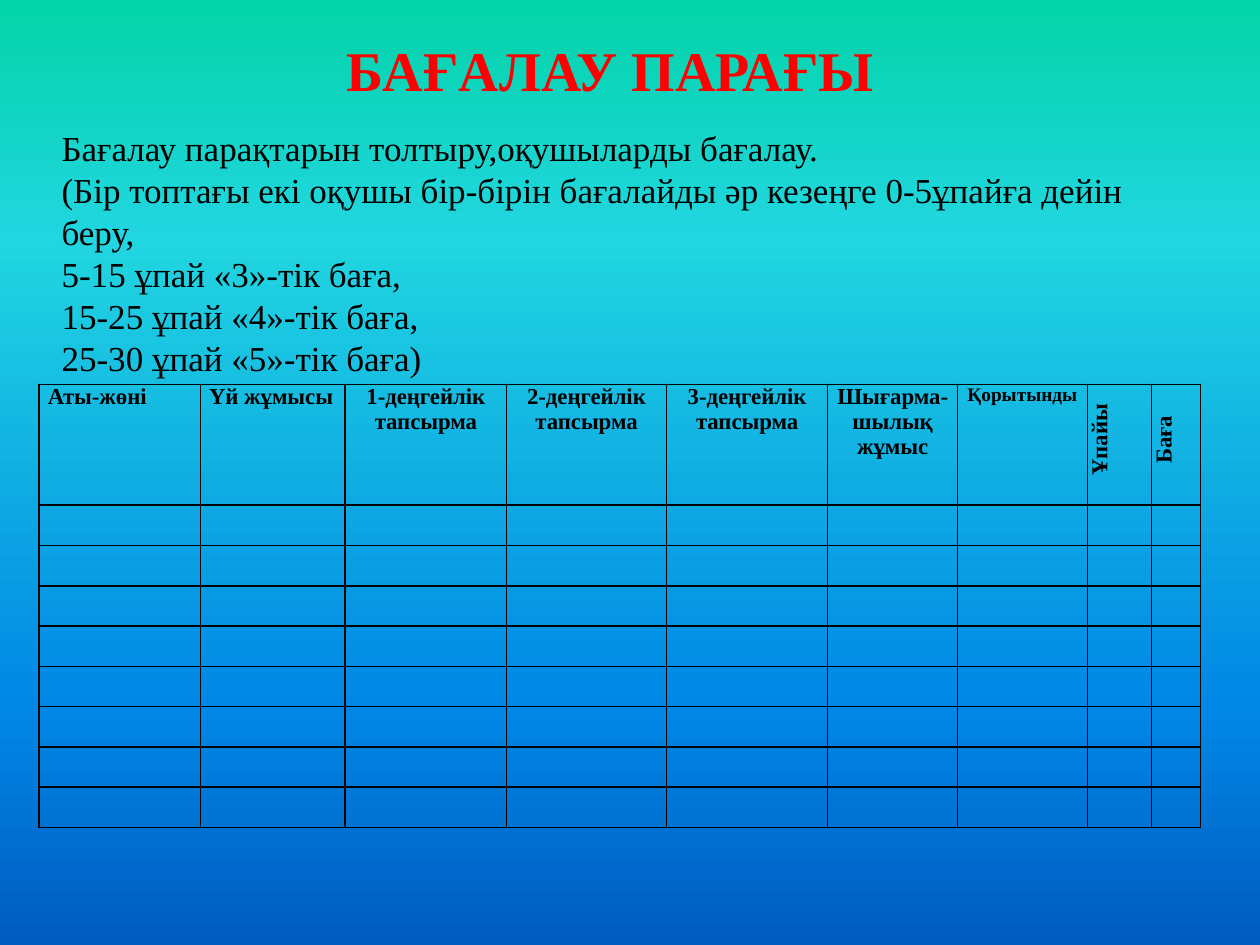
import pptx
import pptx.util
import pptx.dml.color
import pptx.enum.text
import pptx.oxml
import pptx.oxml.ns

ALIGN = pptx.enum.text.PP_ALIGN
ANCHOR = pptx.enum.text.MSO_ANCHOR
COLORS = {"title": "FF0000", "text": "000000", "border": "000000"}
BACKGROUND = {0: "03D4A8", 25: "21D6E0", 75: "0087E6", 100: "005CBF"}
FONT = "Times New Roman"
NS = pptx.oxml.ns.nsdecls("a")


def write(tf, text, size=20, color="text", bold=False, align=ALIGN.LEFT, indent=0):
    """Put each line of text in a paragraph of its own."""
    tf.word_wrap = True
    for i, line in enumerate(text.split("\n")):
        p = tf.paragraphs[0] if i == 0 else tf.add_paragraph()
        p.alignment = align
        p.space_before = pptx.util.Pt(0)
        if indent:
            pPr = p._p.get_or_add_pPr()
            pPr.set("marL", str(pptx.util.Inches(indent)))
            pPr.set("indent", "0")
        # An empty line keeps only its size
        font = p.font
        if line:
            r = p.add_run()
            r.text = line
            font = r.font
        font.name, font.bold = FONT, bold
        font.size = pptx.util.Pt(size)
        font.color.rgb = pptx.dml.color.RGBColor.from_string(COLORS[color])


class Deck:
    """Current slide, measured on a grid of 100 columns by 75 rows."""

    def __init__(self):
        self.prs = pptx.Presentation()
        self.prs.slide_width = pptx.util.Inches(10)
        self.prs.slide_height = pptx.util.Inches(7.5)
        self.unit = self.prs.slide_width / 100
        self.s = self.prs.slides.add_slide(self.prs.slide_layouts[5])

    def grid(self, *lengths):
        return [pptx.util.Emu(round(n * self.unit)) for n in lengths]

    def background(self, stops):
        fill = self.s.background.fill
        fill.gradient()
        fill.gradient_angle = 270
        gs_list = fill._fill._gradFill.find(pptx.oxml.ns.qn("a:gsLst"))
        gs_list.clear()
        for pos, color in stops.items():
            gs_list.append(pptx.oxml.parse_xml(
                f'<a:gs {NS} pos="{pos * 1000}"><a:srgbClr val="{color}"/></a:gs>'))

    def title(self, text, *at, **style):
        sp = self.s.shapes.title
        sp.left, sp.top, sp.width, sp.height = self.grid(*at)
        sp.text_frame.auto_size = pptx.enum.text.MSO_AUTO_SIZE.NONE
        sp.text_frame.vertical_anchor = ANCHOR.TOP
        write(sp.text_frame, text, align=ALIGN.CENTER, **style)

    def text(self, text, *at, **style):
        tf = self.s.shapes.add_textbox(*self.grid(*at)).text_frame
        tf.vertical_anchor = ANCHOR.MIDDLE
        write(tf, text, **style)

    def table(self, header, left, top, cols, rows):
        frame = self.s.shapes.add_table(
            len(rows), len(cols), *self.grid(left, top, sum(cols), sum(rows)))
        table = frame.table
        table.first_row = table.horz_banding = False
        for col, width in zip(table.columns, self.grid(*cols)):
            col.width = width
        for row, height in zip(table.rows, self.grid(*rows)):
            row.height = height
        for i, cell in enumerate(table.iter_cells()):
            self.cell(cell, **(header[i] if i < len(header) else {"text": ""}))

    def cell(self, cell, text, size=13, vertical=False, **style):
        cell.margin_left = cell.margin_right = pptx.util.Inches(0.07)
        cell.margin_top = cell.margin_bottom = 0
        cell.fill.background()
        write(cell.text_frame, text, size=size, bold=True, **style)
        tcPr = cell._tc.get_or_add_tcPr()
        if vertical:
            tcPr.set("vert", "vert270")
        for i, side in enumerate("LRTB"):
            tcPr.insert(i, pptx.oxml.parse_xml(
                f'<a:ln{side} {NS} w="12700"><a:solidFill>'
                f'<a:srgbClr val="{COLORS["border"]}"/></a:solidFill></a:ln{side}>'))


def main():
    deck = Deck()
    deck.background(BACKGROUND)

    # Title and scoring rules
    deck.title("БАҒАЛАУ ПАРАҒЫ", 17.2, 2.3, 62.5, 6.4,
               size=32, color="title", bold=True)
    deck.text("Бағалау парақтарын толтыру,оқушыларды бағалау.\n"
              "(Бір топтағы екі оқушы бір-бірін бағалайды әр кезеңге 0-5ұпайға дейін беру,\n"
              "5-15 ұпай «3»-тік баға,\n"
              "15-25 ұпай «4»-тік баға,\n"
              "25-30 ұпай «5»-тік баға)", 3.9, 9.4, 92.2, 21.2)

    # Score sheet: a header row and eight rows to fill in
    center = {"align": ALIGN.CENTER}
    upright = {"vertical": True, "indent": 0.08, **center}
    header = [
        {"text": "Аты-жөні"},
        {"text": "Үй жұмысы"},
        {"text": "1-деңгейлік\nтапсырма", **center},
        {"text": "2-деңгейлік тапсырма", **center},
        {"text": "3-деңгейлік тапсырма", **center},
        {"text": "Шығарма-шылық\nжұмыс", **center},
        {"text": "Қорытынды", "size": 11, **center},
        {"text": "Ұпайы", **upright},
        {"text": "Баға", **upright},
    ]
    deck.table(header, 3.1, 30.5,
               cols=[12.8, 11.5, 12.8, 12.7, 12.8, 10.3, 10.3, 5.1, 3.9],
               rows=[9.6] + [3.2] * 8)

    deck.prs.save("out.pptx")


if __name__ == "__main__":
    main()
